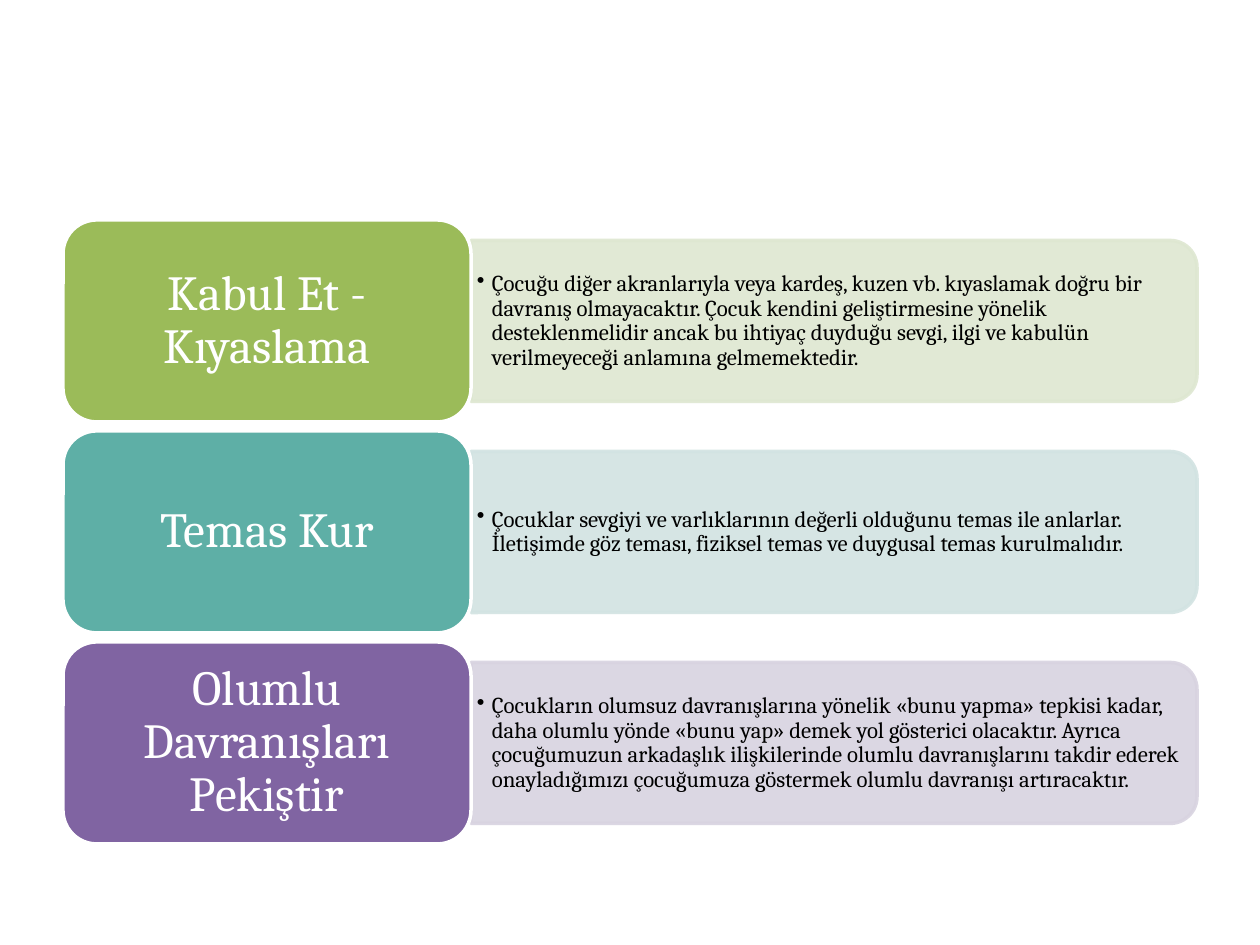
from lxml.etree import SubElement
from pptx import Presentation
from pptx.dml.color import RGBColor
from pptx.enum.shapes import MSO_SHAPE as Preset
from pptx.enum.text import MSO_ANCHOR as Anchor, PP_ALIGN as Align
from pptx.oxml.ns import qn
from pptx.util import Emu, Pt

EMU_PER_PX = 914400 / 126
FONT = "Cambria"
COLORS = {
    "white": "FFFFFF", "black": "000000",
    "green": "9BBB59", "pale green": "DEE7D1",
    "teal": "5EAFA6", "pale teal": "D2E3E2",
    "purple": "8064A2", "pale purple": "D8D3E0",
}

FIRST_CENTER, ROW_PITCH = 321, 211
CARD_LEFT, CARD_WIDTH, CARD_HEIGHT = 63, 408, 202
PANEL_LEFT, PANEL_WIDTH, PANEL_HEIGHT = CARD_LEFT + CARD_WIDTH, 726, 161
TEXT_WIDTH, TEXT_HEIGHT = 718, 145
BULLET_INDENT = 15

ROWS = [
    ("green", "Kabul Et - Kıyaslama",
     "Çocuğu diğer akranlarıyla veya kardeş, kuzen vb. kıyaslamak doğru bir "
     "davranış olmayacaktır. Çocuk kendini geliştirmesine yönelik "
     "desteklenmelidir ancak bu ihtiyaç duyduğu sevgi, ilgi ve kabulün "
     "verilmeyeceği anlamına gelmemektedir."),
    ("teal", "Temas Kur",
     "Çocuklar sevgiyi ve varlıklarının değerli olduğunu temas ile anlarlar. "
     "İletişimde göz teması, fiziksel temas ve duygusal temas kurulmalıdır."),
    ("purple", "Olumlu Davranışları Pekiştir",
     "Çocukların olumsuz davranışlarına yönelik «bunu yapma» tepkisi kadar, "
     "daha olumlu yönde «bunu yap» demek yol gösterici olacaktır. Ayrıca "
     "çocuğumuzun arkadaşlık ilişkilerinde olumlu davranışlarını takdir ederek "
     "onayladığımızı çocuğumuza göstermek olumlu davranışı artıracaktır."),
]


def px(length):
    return Emu(round(length * EMU_PER_PX))


def rgb(name):
    return RGBColor.from_string(COLORS[name])


def add_block(slide, preset, box, fill, line):
    shape = slide.shapes.add_shape(preset, *map(px, box))
    shape.shadow.inherit = False
    shape.fill.solid()
    shape.fill.fore_color.rgb = rgb(fill)
    shape.line.color.rgb = rgb(line)
    shape.line.width = Pt(2)
    return shape


def write_text(shape, text, size, color, margins):
    """Fill the shape with one vertically centred paragraph and return it."""
    frame = shape.text_frame
    frame.word_wrap = True
    frame.vertical_anchor = Anchor.MIDDLE
    frame.margin_left = frame.margin_right = px(margins[0])
    frame.margin_top = frame.margin_bottom = px(margins[1])
    paragraph = frame.paragraphs[0]
    paragraph.line_spacing = 0.9
    run = paragraph.add_run()
    run.text = text
    run.font.name = FONT
    run.font.size = Pt(size)
    run.font.color.rgb = rgb(color)
    return paragraph


def add_bullet(paragraph):
    properties = paragraph._p.get_or_add_pPr()
    properties.set("marL", str(px(BULLET_INDENT)))
    properties.set("indent", str(px(-BULLET_INDENT)))
    SubElement(properties, qn("a:buChar"), char="•")


def add_panel(slide, center, color):
    """Draw the pale panel as an upright shape turned so its round end is right."""
    left = PANEL_LEFT + (PANEL_WIDTH - PANEL_HEIGHT) / 2
    box = (left, center - PANEL_WIDTH / 2, PANEL_HEIGHT, PANEL_WIDTH)
    panel = add_block(slide, Preset.ROUND_2_SAME_RECTANGLE, box, color, color)
    panel.rotation = 90
    for solid_color in panel._element.spPr.iter(qn("a:srgbClr")):
        SubElement(solid_color, qn("a:alpha"), val="90000")


def add_description(slide, center, text):
    box = (PANEL_LEFT, center - TEXT_HEIGHT / 2, TEXT_WIDTH, TEXT_HEIGHT)
    text_box = slide.shapes.add_textbox(*map(px, box))
    paragraph = write_text(text_box, text, 13, "black", (6, 4))
    paragraph.level = 1
    paragraph.alignment = Align.LEFT
    add_bullet(paragraph)


def add_card(slide, center, color, heading):
    box = (CARD_LEFT, center - CARD_HEIGHT / 2, CARD_WIDTH, CARD_HEIGHT)
    card = add_block(slide, Preset.ROUNDED_RECTANGLE, box, color, "white")
    paragraph = write_text(card, heading, 28, "white", (15, 8))
    paragraph.alignment = Align.CENTER


def main():
    presentation = Presentation()
    presentation.slide_width, presentation.slide_height = px(1260), px(945)
    slide = presentation.slides.add_slide(presentation.slide_layouts[6])
    for index, (color, heading, description) in enumerate(ROWS):
        center = FIRST_CENTER + index * ROW_PITCH
        add_panel(slide, center, f"pale {color}")
        add_description(slide, center, description)
        add_card(slide, center, color, heading)
    presentation.save("out.pptx")


if __name__ == "__main__":
    main()
